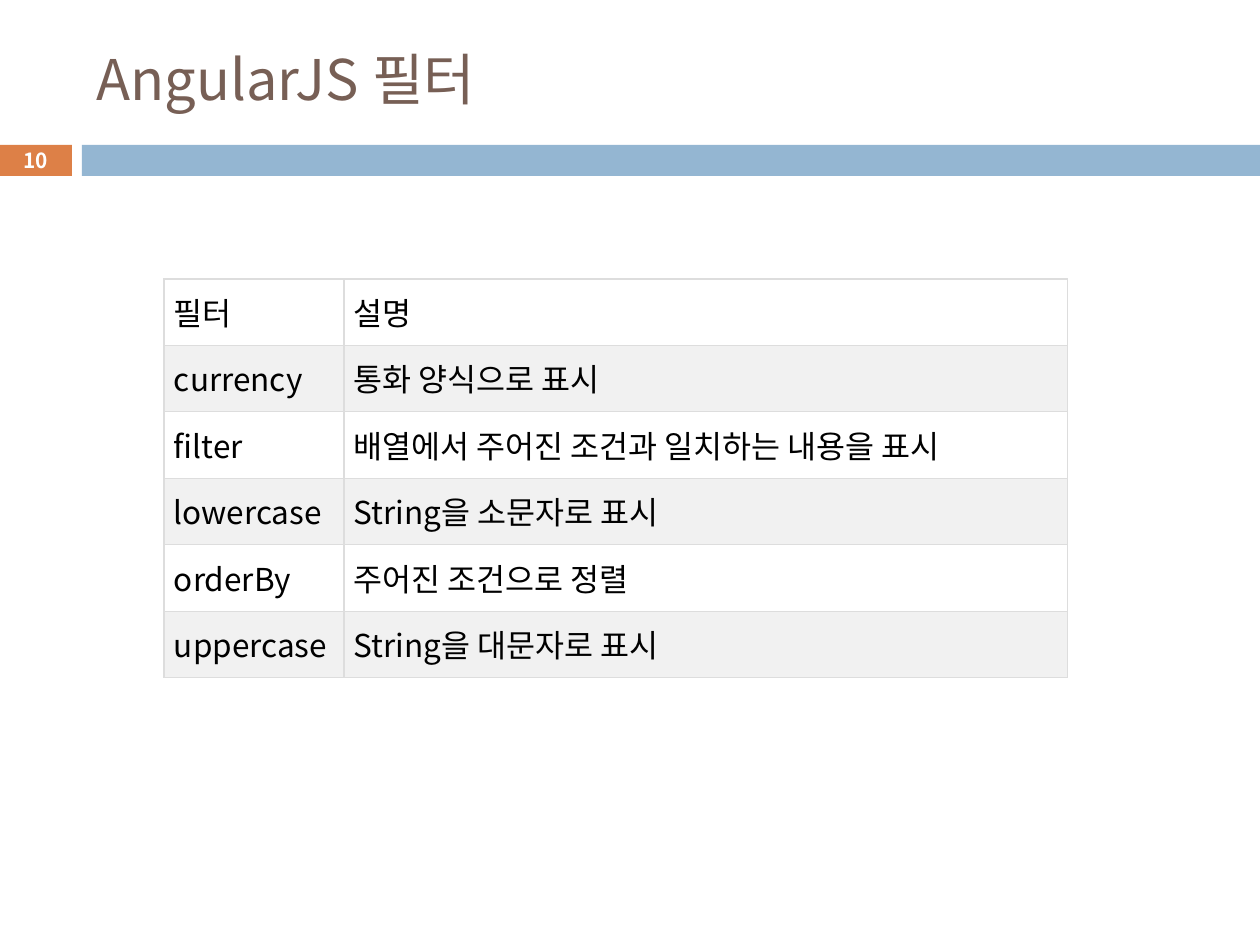
from lxml import etree
from pptx import Presentation
from pptx.dml.color import RGBColor
from pptx.enum.shapes import MSO_SHAPE
from pptx.enum.text import MSO_ANCHOR, PP_ALIGN
from pptx.oxml.ns import qn
from pptx.util import Pt

RECT = MSO_SHAPE.RECTANGLE
MIDDLE = MSO_ANCHOR.MIDDLE
LEFT, CENTER = PP_ALIGN.LEFT, PP_ALIGN.CENTER
FONT = "Noto Sans CJK KR"
COLORS = {"orange": "DD8047", "blue": "94B6D2", "brown": "775F55", "white": "FFFFFF",
          "black": "000000", "band": "F1F1F1", "border": "DDDDDD"}


def px(n):
    return round(n * 914400 / 126)


def write(tf, text, color, size, bold=False, align=LEFT):
    p = tf.paragraphs[0]
    p.alignment = align
    r = p.add_run()
    r.text = text
    for name, value in {"name": FONT, "size": Pt(size), "bold": bold}.items():
        setattr(r.font, name, value)
    r.font.color.rgb = RGBColor.from_string(COLORS[color])
    etree.SubElement(r.font._element, qn("a:ea"), typeface=FONT)


prs = Presentation()
prs.slide_width, prs.slide_height = px(1260), px(945)
s = prs.slides.add_slide(prs.slide_layouts[6])

# Header bars
for left, width, color in [(-1, 73, "orange"), (82, 1178, "blue")]:
    sp = s.shapes.add_shape(RECT, px(left), px(145), px(width), px(31))
    sp.shadow.inherit = False
    sp.fill.solid()
    sp.fill.fore_color.rgb = RGBColor.from_string(COLORS[color])
    sp.line.fill.background()

# Title and slide number
labels = [
    ((84, 31, 1124, 94), "AngularJS 필터", "brown", 32, False, LEFT),
    ((-1, 143, 73, 34), "10", "white", 11.9, True, CENTER),
]
for box, *label in labels:
    tf = s.shapes.add_textbox(*map(px, box)).text_frame
    tf.word_wrap = True
    tf.vertical_anchor = MIDDLE
    write(tf, *label)

# Filter table
rows = [
    ("필터", "설명"),
    ("currency", "통화 양식으로 표시"),
    ("filter", "배열에서 주어진 조건과 일치하는 내용을 표시"),
    ("lowercase", "String을 소문자로 표시"),
    ("orderBy", "주어진 조건으로 정렬"),
    ("uppercase", "String을 대문자로 표시"),
]
frame = s.shapes.add_table(len(rows), 2, px(164), px(279), px(904), px(399))
table = frame.table
for col, width in zip(table.columns, (180, 724)):
    col.width = px(width)

for i, row in enumerate(rows):
    for j, text in enumerate(row):
        cell = table.cell(i, j)
        for side in ("left", "right", "top", "bottom"):
            setattr(cell, f"margin_{side}", px(10))
        write(cell.text_frame, text, "black", 18)

        # Thin borders on all four sides
        tc_pr = cell._tc.get_or_add_tcPr()
        for edge in ("lnL", "lnR", "lnT", "lnB"):
            ln = etree.SubElement(tc_pr, qn(f"a:{edge}"), w=str(Pt(0.75)))
            fill = etree.SubElement(ln, qn("a:solidFill"))
            etree.SubElement(fill, qn("a:srgbClr"), val=COLORS["border"])

        cell.fill.solid()
        cell.fill.fore_color.rgb = RGBColor.from_string(COLORS["band" if i % 2 else "white"])

prs.save("out.pptx")
